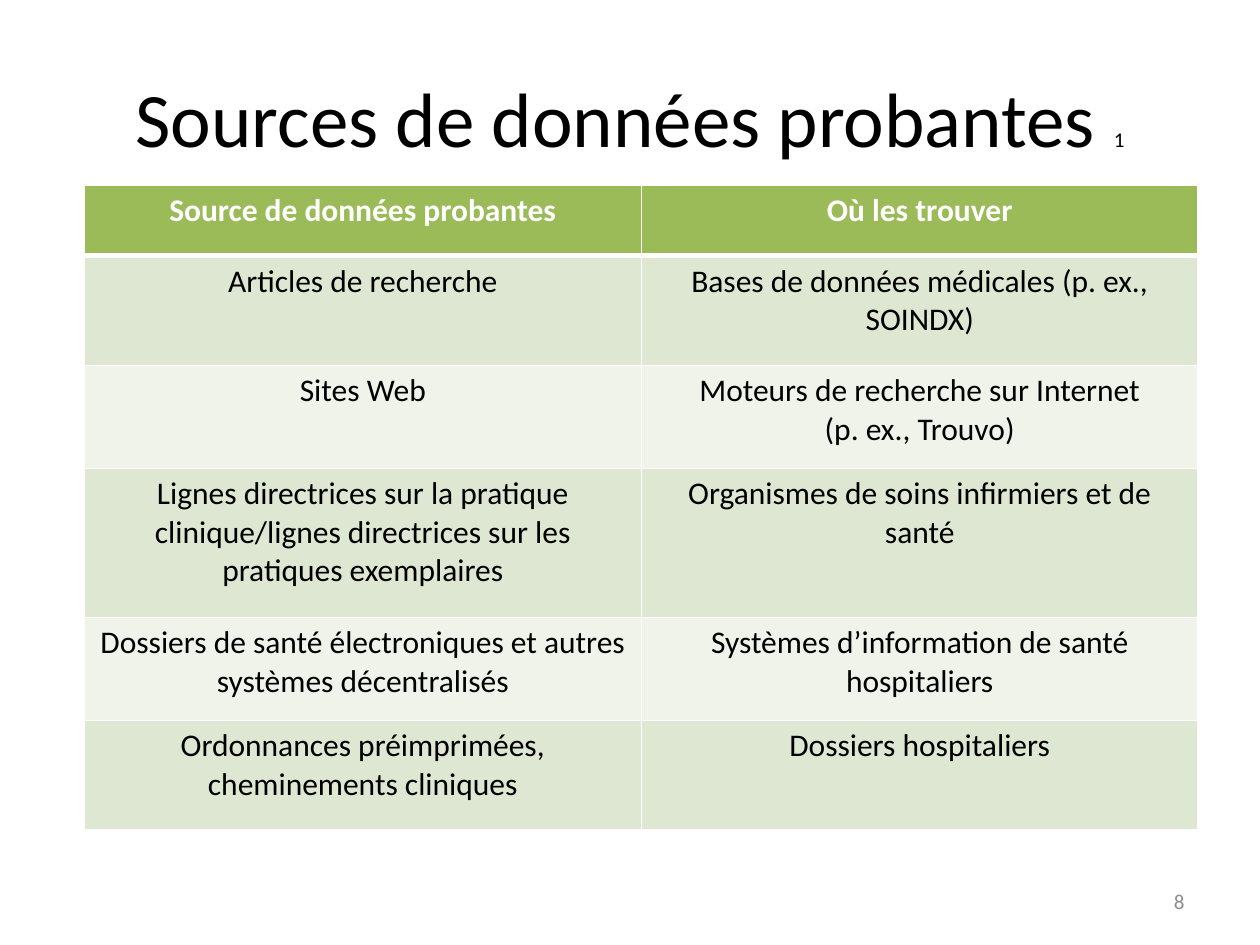
from lxml.etree import SubElement
from pptx import Presentation
from pptx.dml.color import RGBColor
from pptx.enum.text import MSO_ANCHOR, PP_ALIGN
from pptx.oxml.ns import qn
from pptx.util import Inches, Pt

FONT = "Calibri"
NO_BREAK_SPACE = chr(160)
EXAMPLE = f"p.{NO_BREAK_SPACE}ex.,"
COLORS = {
    "text": "000000",
    "white": "FFFFFF",
    "header": "9BBB59",
    "band_dark": "DEE7D1",
    "band_light": "EFF3EA",
    "number": "8C8C8C",
}
ROWS = [
    ("Source de données probantes", "Où les trouver"),
    ("Articles de recherche", f"Bases de données médicales ({EXAMPLE} SOINDX)"),
    ("Sites Web", f"Moteurs de recherche sur Internet ({EXAMPLE} Trouvo)"),
    ("Lignes directrices sur la pratique clinique/lignes directrices sur les "
     "pratiques exemplaires", "Organismes de soins infirmiers et de santé"),
    ("Dossiers de santé électroniques et autres systèmes décentralisés",
     "Systèmes d’information de santé hospitaliers"),
    ("Ordonnances préimprimées, cheminements cliniques", "Dossiers hospitaliers"),
]
ROW_HEIGHTS = [0.56, 0.87, 0.82, 1.18, 0.82, 0.87]
COLUMN_WIDTH = 4.42


def rgb(name):
    return RGBColor.from_string(COLORS[name])


def add_text(paragraph, text, size=18, color="text", bold=False, align=PP_ALIGN.CENTER):
    paragraph.alignment = align
    run = paragraph.add_run()
    run.text = text
    run.font.name = FONT
    run.font.size = Pt(size)
    run.font.bold = bold
    run.font.color.rgb = rgb(color)


def set_borders(cell, bottom=1, top=1):
    """Draw white cell borders; the fill must be set afterwards to keep the XML order."""
    properties = cell._tc.get_or_add_tcPr()
    for side, width in (("L", 1), ("R", 1), ("T", top), ("B", bottom)):
        line = SubElement(properties, qn(f"a:ln{side}"), w=str(Pt(width)))
        fill = SubElement(line, qn("a:solidFill"))
        SubElement(fill, qn("a:srgbClr"), val=COLORS["white"])


def add_title(slide):
    title = slide.shapes.title
    title.left, title.top = Inches(0.5), Inches(0.3)
    title.width, title.height = Inches(9), Inches(1.25)
    title.text_frame.vertical_anchor = MSO_ANCHOR.MIDDLE
    paragraph = title.text_frame.paragraphs[0]
    add_text(paragraph, "Sources de données probantes ", size=44)
    add_text(paragraph, "1", size=12)


def add_source_table(slide):
    table = slide.shapes.add_table(
        len(ROWS), 2, Inches(0.67), Inches(1.47),
        Inches(2 * COLUMN_WIDTH), Inches(sum(ROW_HEIGHTS))).table
    for column in table.columns:
        column.width = Inches(COLUMN_WIDTH)
    for index, (texts, height) in enumerate(zip(ROWS, ROW_HEIGHTS)):
        is_header = index == 0
        band = "header" if is_header else "band_dark" if index % 2 else "band_light"
        table.rows[index].height = Inches(height)
        for cell, text in zip(table.rows[index].cells, texts):
            set_borders(cell, bottom=3 if is_header else 1, top=3 if index == 1 else 1)
            cell.fill.solid()
            cell.fill.fore_color.rgb = rgb(band)
            add_text(cell.text_frame.paragraphs[0], text, bold=is_header,
                     color="white" if is_header else "text")


def add_slide_number(slide):
    box = slide.shapes.add_textbox(Inches(7.17), Inches(6.95), Inches(2.33), Inches(0.4))
    box.text_frame.word_wrap = True
    box.text_frame.vertical_anchor = MSO_ANCHOR.MIDDLE
    add_text(box.text_frame.paragraphs[0], "8", size=12, color="number",
             align=PP_ALIGN.RIGHT)


def main():
    presentation = Presentation()
    presentation.slide_width, presentation.slide_height = Inches(10), Inches(7.5)
    slide = presentation.slides.add_slide(presentation.slide_layouts[5])
    add_title(slide)
    add_source_table(slide)
    add_slide_number(slide)
    presentation.save("out.pptx")


if __name__ == "__main__":
    main()
